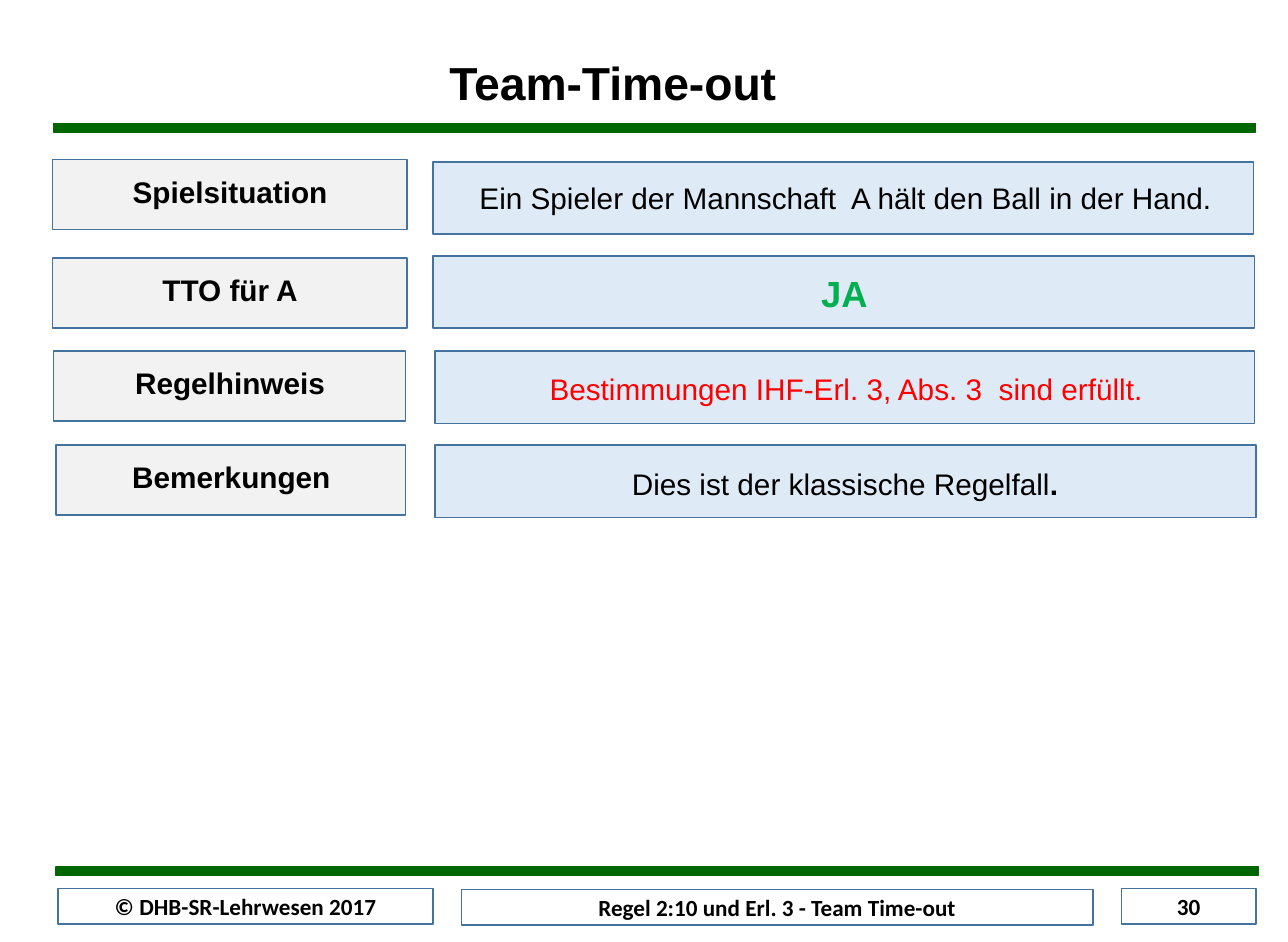
from dataclasses import dataclass

from pptx import Presentation
from pptx.dml.color import RGBColor
from pptx.enum.shapes import MSO_SHAPE
from pptx.enum.text import MSO_ANCHOR, MSO_AUTO_SIZE, PP_ALIGN
from pptx.util import Inches, Pt

RECT = MSO_SHAPE.RECTANGLE
CENTER, LEFT = PP_ALIGN.CENTER, PP_ALIGN.LEFT
MIDDLE, TOP = MSO_ANCHOR.MIDDLE, MSO_ANCHOR.TOP
GROW = MSO_AUTO_SIZE.SHAPE_TO_FIT_TEXT


@dataclass(frozen=True)
class Theme:
    green: str = "006600"
    border: str = "43739E"
    white: str = "FFFFFF"
    label_fill: str = "F2F2F2"
    answer_fill: str = "DEEBF7"
    black: str = "000000"
    yes: str = "00B050"
    red: str = "FF0000"
    font: str = "Arial"
    footer_font: str = "Calibri"
    title_size: int = 28
    yes_size: int = 22
    body_size: int = 18
    footer_size: int = 14


T = Theme()


@dataclass(frozen=True)
class Box:
    x: float
    y: float
    w: float
    h: float


@dataclass(frozen=True)
class Style:
    size: int = T.body_size
    color: str = T.black
    bold: bool = False
    font: str = T.font
    align: PP_ALIGN = CENTER


@dataclass(frozen=True)
class Row:
    label: str
    label_box: Box
    answer: str
    answer_box: Box
    text_box: Box
    style: Style = Style()
    wrap: bool = True
    bold_end: str = ""


LABEL = Style(bold=True)
TITLE = Style(T.title_size, bold=True, align=LEFT)
FOOTER = Style(T.footer_size, bold=True, font=T.footer_font)

BARS = [Box(0.45, 1.04, 10.11, 0.07), Box(0.47, 7.29, 10.11, 0.07)]

ROWS = [
    Row("Spielsituation", Box(0.44, 1.34, 2.98, 0.59),
        "Ein Spieler der Mannschaft  A hält den Ball in der Hand.",
        Box(3.64, 1.36, 6.9, 0.61), Box(3.66, 1.46, 6.9, 0.4)),
    Row("TTO für A", Box(0.44, 2.17, 2.98, 0.59),
        "JA", Box(3.64, 2.15, 6.91, 0.61), Box(6.8, 2.23, 0.6, 0.47),
        Style(T.yes_size, T.yes, True), wrap=False),
    Row("Regelhinweis", Box(0.45, 2.95, 2.96, 0.59),
        "Bestimmungen IHF-Erl. 3, Abs. 3  sind erfüllt.",
        Box(3.66, 2.95, 6.89, 0.61), Box(3.68, 3.07, 6.87, 0.4),
        Style(color=T.red)),
    Row("Bemerkungen", Box(0.47, 3.74, 2.94, 0.59),
        "Dies ist der klassische Regelfall",
        Box(3.66, 3.74, 6.9, 0.61), Box(3.66, 3.87, 6.89, 0.4),
        bold_end="."),
]

FOOTERS = [
    ("© DHB-SR-Lehrwesen 2017", Box(0.49, 7.47, 3.15, 0.3)),
    ("Regel 2:10 und Erl. 3 - Team Time-out", Box(3.88, 7.48, 5.31, 0.3)),
    ("30", Box(9.43, 7.47, 1.13, 0.3)),
]


def inches(box: Box) -> tuple:
    return Inches(box.x), Inches(box.y), Inches(box.w), Inches(box.h)


def add_panel(slide, box: Box, fill: str, border: str = T.border, width: float = 1):
    s = slide.shapes.add_shape(RECT, *inches(box))
    s.shadow.inherit = False
    s.fill.solid()
    s.fill.fore_color.rgb = RGBColor.from_string(fill)
    s.line.color.rgb = RGBColor.from_string(border)
    s.line.width = Pt(width)
    return s


def write(s, text: str, style: Style, anchor: MSO_ANCHOR = TOP, wrap: bool = True):
    tf = s.text_frame
    tf.word_wrap = wrap
    tf.vertical_anchor = anchor
    p = tf.paragraphs[0]
    p.alignment = style.align
    p.font.name = style.font
    p.font.size = Pt(style.size)
    p.font.bold = style.bold
    p.font.color.rgb = RGBColor.from_string(style.color)
    p.add_run().text = text
    return p


def add_text(slide, box: Box, text: str, style: Style, wrap: bool = True):
    s = slide.shapes.add_textbox(*inches(box))
    s.text_frame.auto_size = GROW
    return write(s, text, style, wrap=wrap)


def add_row(slide, row: Row) -> None:
    # Label on the left
    box = row.label_box
    add_panel(slide, box, T.label_fill)
    add_text(slide, Box(box.x, box.y + 0.07, box.w + 0.01, 0.4), row.label, LABEL)
    # Answer on the right
    add_panel(slide, row.answer_box, T.answer_fill)
    p = add_text(slide, row.text_box, row.answer, row.style, row.wrap)
    if row.bold_end:
        r = p.add_run()
        r.text = row.bold_end
        r.font.bold = True


def main() -> None:
    prs = Presentation()
    prs.slide_width, prs.slide_height = Inches(10.83), Inches(7.92)
    slide = prs.slides.add_slide(prs.slide_layouts[6])

    # Green bars
    for bar in BARS:
        add_panel(slide, bar, T.green, T.green, 0.75)

    # Title
    add_text(slide, Box(3.68, 0.41, 2.98, 0.57), "Team-Time-out", TITLE, wrap=False)

    # Label and answer rows
    for row in ROWS:
        add_row(slide, row)

    # Footer boxes
    for text, box in FOOTERS:
        write(add_panel(slide, box, T.white), text, FOOTER, MIDDLE)

    prs.save("out.pptx")


if __name__ == "__main__":
    main()
